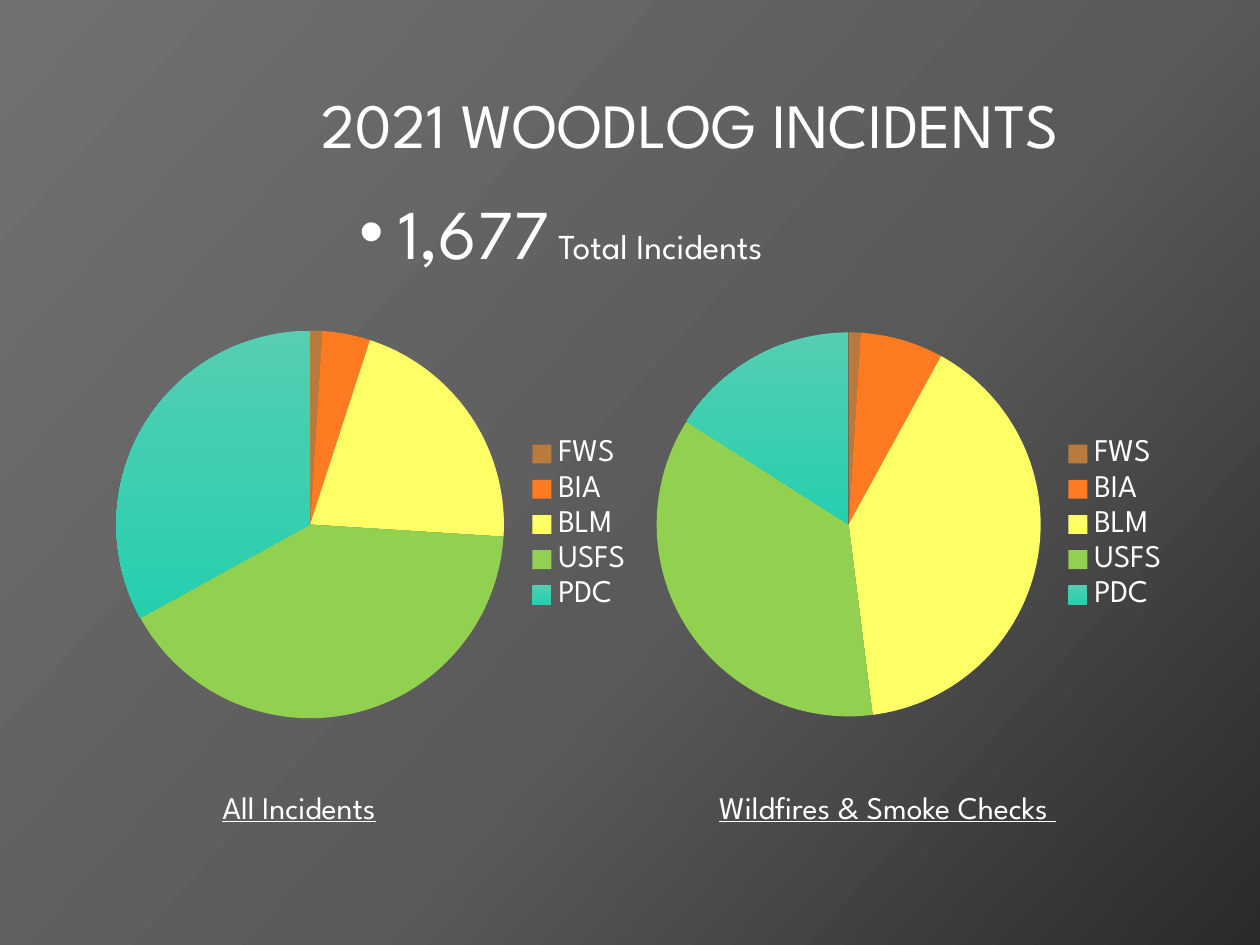
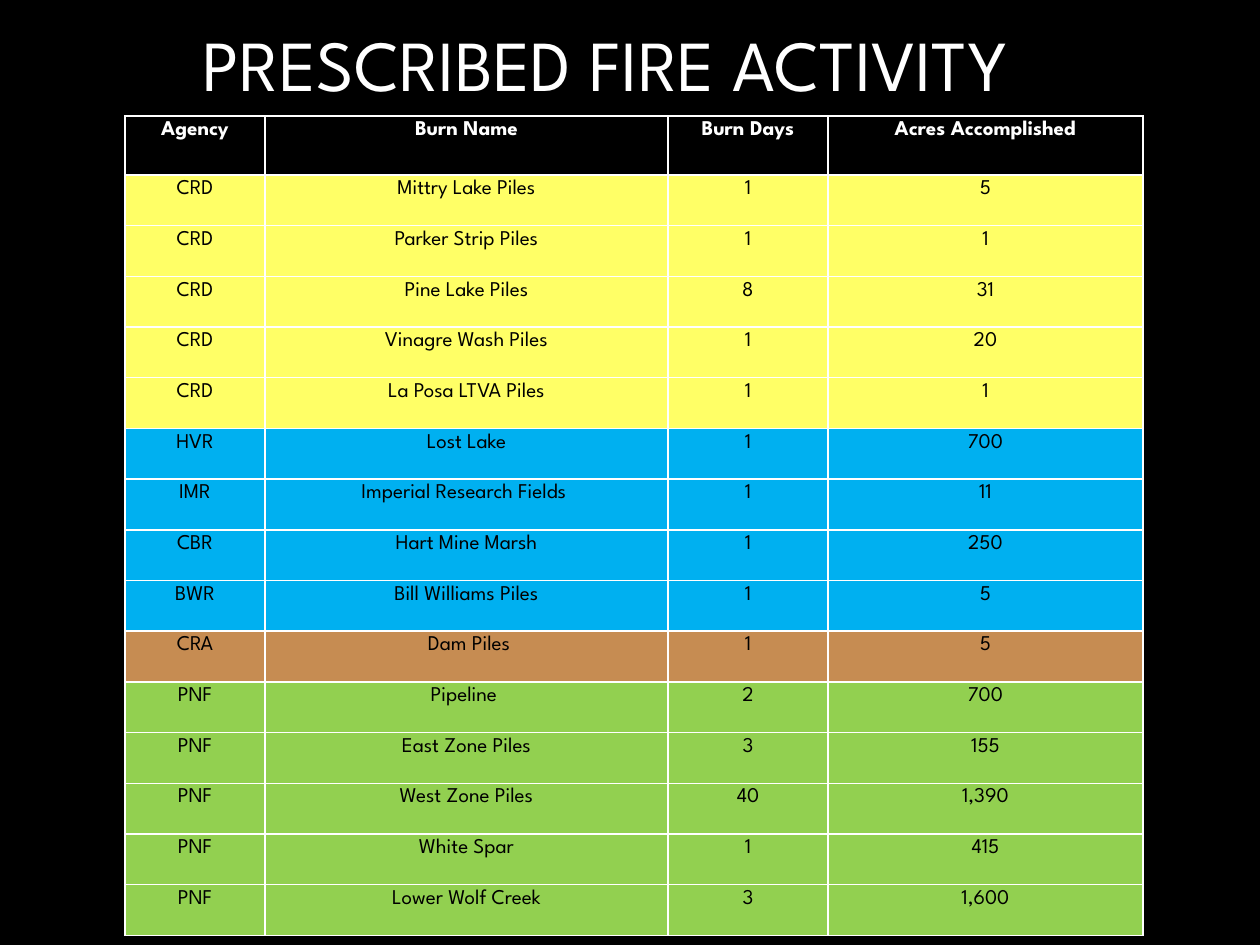
"""Build two slides on yearly fire incidents and prescribed burns."""

from copy import deepcopy
from dataclasses import dataclass
from typing import NamedTuple

from pptx import Presentation
from pptx import util as u
from pptx.chart import data as chart_data
from pptx.dml.color import RGBColor
from pptx.enum import chart as charts
from pptx.enum import text
from pptx.oxml import parse_xml
from pptx.oxml.ns import nsdecls, qn

SCALE = 914400 / 126


@dataclass(frozen=True)
class Theme:
    font: str = "League Spartan"
    white: str = "FFFFFF"
    black: str = "000000"
    brown: str = "B97B3D"
    tan: str = "C68C52"
    orange: str = "FF7B21"
    yellow: str = "FFFF66"
    green: str = "92D050"
    blue: str = "00B0F0"
    teal: tuple[str, str] = ("55CEB2", "25CFAE")
    backdrop: tuple[str, str, str] = ("717171", "5A5A5A", "2B2B2B")
    backdrop_stops: tuple[float, float, float] = (0, 0.57, 1)
    title_size: int = 36
    wide_title_size: int = 41
    total_size: int = 40
    total_label_size: int = 20
    label_size: int = 18
    cell_size: int = 12


class Area(NamedTuple):
    left: int
    top: int
    width: int
    height: int


class Pie(NamedTuple):
    area: Area
    shares: tuple[int, ...]


class Caption(NamedTuple):
    area: Area
    words: str
    align: text.PP_ALIGN
    wrap: bool


class Burn(NamedTuple):
    agency: str
    name: str
    days: str
    acres: str


THEME = Theme()

AGENCIES = ("FWS", "BIA", "BLM", "USFS", "PDC")
SLICE_FILLS = (THEME.brown, THEME.orange, THEME.yellow, THEME.green, THEME.teal)
PLOT_LAYOUT = {"x": 0.03, "y": 0.13, "w": 0.71, "h": 0.74}

PIES = (
    Pie(Area(100, 262, 546, 525), (1, 4, 21, 41, 33)),
    Pie(Area(640, 265, 542, 519), (1, 7, 40, 36, 16)),
)
CAPTIONS = (
    Caption(Area(210, 782, 183, 50), "All Incidents", text.PP_ALIGN.LEFT, False),
    Caption(Area(546, 782, 683, 50), "Wildfires & Smoke Checks ", text.PP_ALIGN.CENTER, True),
)

TABLE_AREA = Area(125, 116, 1018, 820)
COLUMN_WIDTHS = (140, 403, 160, 315)
HEADER_HEIGHT = 59
HEADER = Burn("Agency", "Burn Name", "Burn Days", "Acres Accomplished")
BURNS = (
    Burn("CRD", "Mittry Lake Piles", "1", "5"),
    Burn("CRD", "Parker Strip Piles", "1", "1"),
    Burn("CRD", "Pine Lake Piles", "8", "31"),
    Burn("CRD", "Vinagre Wash Piles", "1", "20"),
    Burn("CRD", "La Posa LTVA Piles", "1", "1"),
    Burn("HVR", "Lost Lake", "1", "700"),
    Burn("IMR", "Imperial Research Fields ", "1", "11"),
    Burn("CBR", "Hart Mine Marsh", "1", "250"),
    Burn("BWR", "Bill Williams Piles", "1", "5"),
    Burn("CRA", " Dam Piles", "1", "5"),
    Burn("PNF", "Pipeline ", "2", "700"),
    Burn("PNF", "East Zone Piles", "3", "155"),
    Burn("PNF", "West Zone Piles", "40", "1,390"),
    Burn("PNF", "White Spar", "1", "415"),
    Burn("PNF", "Lower Wolf Creek", "3", "1,600"),
)
AGENCY_FILLS = {
    "CRD": THEME.yellow,
    "HVR": THEME.blue,
    "IMR": THEME.blue,
    "CBR": THEME.blue,
    "BWR": THEME.blue,
    "CRA": THEME.tan,
    "PNF": THEME.green,
}


def px(length: float) -> u.Emu:
    return u.Emu(round(length * SCALE))


def emu_area(area: Area) -> list[u.Emu]:
    return [px(length) for length in area]


def move(box, area: Area) -> None:
    box.left, box.top, box.width, box.height = emu_area(area)


def style_font(font, size: int, colour: str = THEME.white) -> None:
    font.name = THEME.font
    font.size = u.Pt(size)
    font.color.rgb = RGBColor.from_string(colour)


def paint_gradient(fill, colours: tuple[str, ...], stops: tuple[float, ...], angle: float) -> None:
    for stop, colour, position in zip(fill.gradient_stops, colours, stops):
        stop.color.rgb = RGBColor.from_string(colour)
        stop.position = position
    fill.gradient_angle = angle


def paint_backdrop(page) -> None:
    fill = page.background.fill
    fill.gradient()
    stop_list = page.element.xpath(".//a:gsLst")[0]
    stop_list.append(deepcopy(stop_list[-1]))
    paint_gradient(fill, THEME.backdrop, THEME.backdrop_stops, 318)


def set_title(page, words: str, area: Area, size: int, align: text.PP_ALIGN) -> None:
    title = page.shapes.title
    move(title, area)
    frame = title.text_frame
    frame.text = words
    frame.vertical_anchor = text.MSO_ANCHOR.MIDDLE
    frame.auto_size = text.MSO_AUTO_SIZE.NONE
    para = frame.paragraphs[0]
    para.alignment = align
    para.line_spacing = 0.9
    style_font(para.runs[0].font, size)


def set_total(page, total: str, label: str, area: Area) -> None:
    body = page.placeholders[1]
    move(body, area)
    frame = body.text_frame
    frame.text = total
    frame.word_wrap = False
    frame.auto_size = text.MSO_AUTO_SIZE.SHAPE_TO_FIT_TEXT
    para = frame.paragraphs[0]
    para.space_before = u.Pt(0)
    indent = px(39)
    properties = para._p.get_or_add_pPr()
    properties.set("marL", str(indent))
    properties.set("indent", str(-indent))
    style_font(para.runs[0].font, THEME.total_size)
    span = para.add_run()
    span.text = label
    style_font(span.font, THEME.total_label_size)


def place_plot(chart) -> None:
    plot_area = chart.element.xpath("c:chart/c:plotArea")[0]
    old_layout = plot_area.find(qn("c:layout"))
    if old_layout is not None:
        plot_area.remove(old_layout)
    sides = "".join(f'<c:{side} val="{share}"/>' for side, share in PLOT_LAYOUT.items())
    plot_area.insert(0, parse_xml(
        f'<c:layout {nsdecls("c")}><c:manualLayout><c:layoutTarget val="inner"/>'
        f'<c:xMode val="edge"/><c:yMode val="edge"/>{sides}</c:manualLayout></c:layout>'
    ))


def add_pie(page, pie: Pie) -> None:
    figures = chart_data.CategoryChartData()
    figures.categories = AGENCIES
    figures.add_series("Series 1", pie.shares)
    frame = page.shapes.add_chart(charts.XL_CHART_TYPE.PIE, *emu_area(pie.area), figures)
    chart = frame.chart
    chart.has_title = False
    chart.has_legend = True
    chart.legend.position = charts.XL_LEGEND_POSITION.RIGHT
    chart.legend.include_in_layout = False
    style_font(chart.font, THEME.label_size)
    plot = chart.plots[0]
    plot.vary_by_categories = True
    for index, colour in enumerate(SLICE_FILLS):
        look = plot.series[0].points[index].format
        look.line.fill.background()
        if isinstance(colour, tuple):
            look.fill.gradient()
            paint_gradient(look.fill, colour, (0, 1), 270)
        else:
            look.fill.solid()
            look.fill.fore_color.rgb = RGBColor.from_string(colour)
    place_plot(chart)


def add_caption(page, caption: Caption) -> None:
    frame = page.shapes.add_textbox(*emu_area(caption.area)).text_frame
    frame.text = caption.words
    frame.word_wrap = caption.wrap
    frame.auto_size = text.MSO_AUTO_SIZE.SHAPE_TO_FIT_TEXT
    para = frame.paragraphs[0]
    para.alignment = caption.align
    font = para.runs[0].font
    style_font(font, THEME.label_size)
    font.underline = True


def fill_cell(cell, words: str, fill: str, colour: str, bold: bool) -> None:
    cell.text_frame.text = words
    cell.margin_left = cell.margin_right = px(9)
    cell.margin_top = cell.margin_bottom = px(5)
    properties = cell._tc.get_or_add_tcPr()
    for side in "LRTB":
        properties.append(parse_xml(
            f'<a:ln{side} {nsdecls("a")} w="{u.Pt(1)}"><a:solidFill>'
            f'<a:srgbClr val="{THEME.white}"/></a:solidFill></a:ln{side}>'
        ))
    cell.fill.solid()
    cell.fill.fore_color.rgb = RGBColor.from_string(fill)
    para = cell.text_frame.paragraphs[0]
    para.alignment = text.PP_ALIGN.CENTER
    font = para.runs[0].font
    style_font(font, THEME.cell_size, colour)
    font.bold = bold


def add_burn_table(page) -> None:
    lines = (HEADER, *BURNS)
    table = page.shapes.add_table(len(lines), len(HEADER), *emu_area(TABLE_AREA)).table
    table.horz_banding = False
    for column, width in zip(table.columns, COLUMN_WIDTHS):
        column.width = px(width)
    burn_height = (TABLE_AREA.height - HEADER_HEIGHT) / len(BURNS)
    for row, line in zip(table.rows, lines):
        is_header = line is HEADER
        row.height = px(HEADER_HEIGHT if is_header else burn_height)
        fill = THEME.black if is_header else AGENCY_FILLS[line.agency]
        colour = THEME.white if is_header else THEME.black
        for cell, words in zip(row.cells, line):
            fill_cell(cell, words, fill, colour, is_header)


def build_incidents(deck) -> None:
    page = deck.slides.add_slide(deck.slide_layouts[1])
    paint_backdrop(page)
    set_title(page, "2021 WOODLOG INCIDENTS", Area(210, 49, 861, 158),
              THEME.title_size, text.PP_ALIGN.RIGHT)
    set_total(page, "1,677", " Total Incidents", Area(347, 183, 491, 97))
    for pie in PIES:
        add_pie(page, pie)
    for caption in CAPTIONS:
        add_caption(page, caption)


def build_burns(deck) -> None:
    page = deck.slides.add_slide(deck.slide_layouts[5])
    fill = page.background.fill
    fill.solid()
    fill.fore_color.rgb = RGBColor.from_string(THEME.black)
    set_title(page, "PRESCRIBED FIRE ACTIVITY", Area(123, 1, 966, 134),
              THEME.wide_title_size, text.PP_ALIGN.CENTER)
    add_burn_table(page)


def main() -> None:
    deck = Presentation()
    deck.slide_width, deck.slide_height = px(1260), px(945)
    build_incidents(deck)
    build_burns(deck)
    deck.save("out.pptx")


if __name__ == "__main__":
    main()
